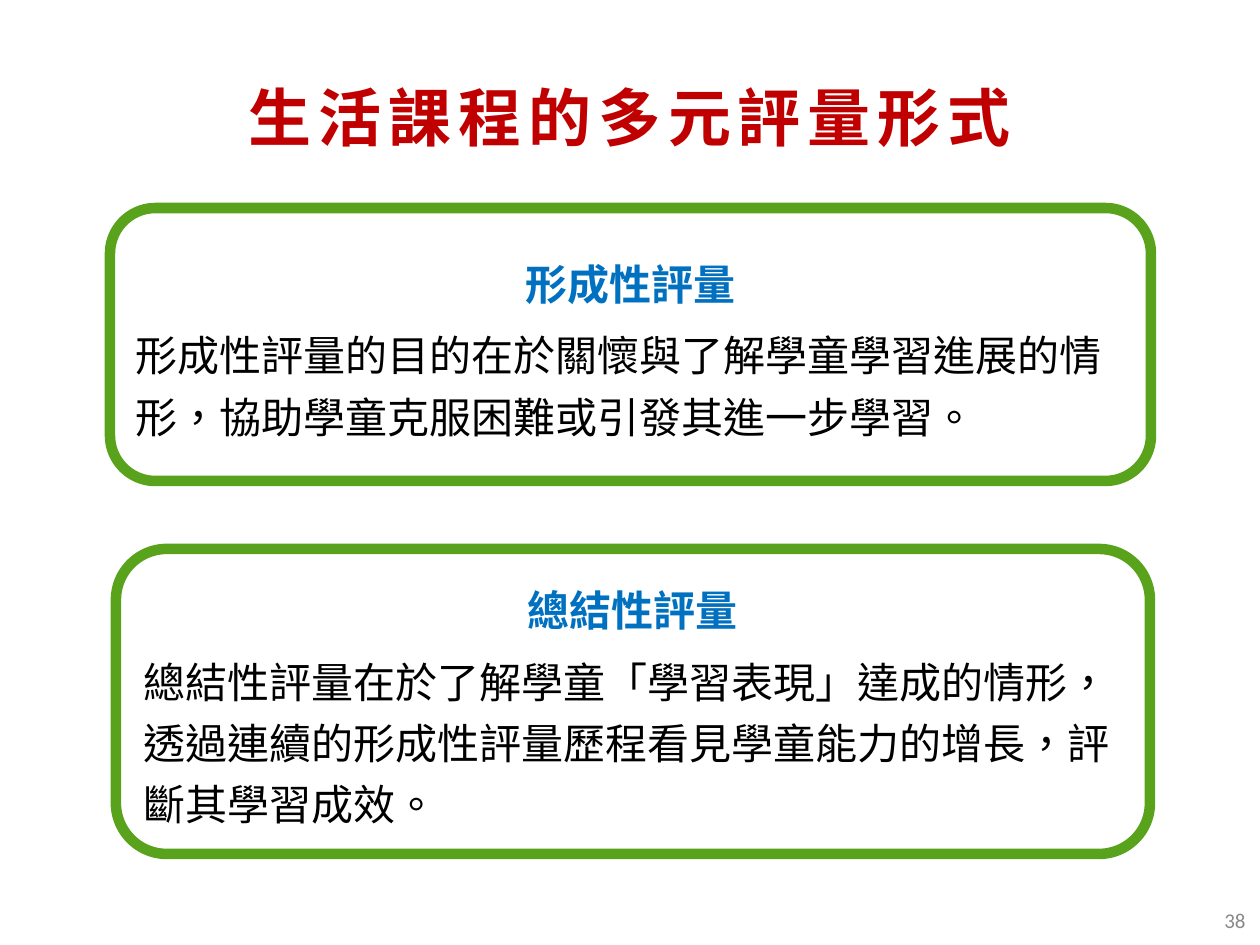
"""Build a slide on the forms of assessment in the life curriculum."""
from lxml import etree
from pptx import Presentation
from pptx import util as u
from pptx.dml.color import RGBColor
from pptx.enum import shapes, text
from pptx.oxml.ns import qn

PX = 914400 // 126
COLORS = {"title": "C00000", "heading": "0070C0", "body": "000000",
          "number": "898989", "border": "58A31B", "panel": "FFFFFF"}
CJK = "Noto Sans CJK SC"
ALIGN = text.PP_ALIGN


def write(paragraph, words, color, font, align, spacing=0):
    paragraph.alignment = align
    run = paragraph.add_run()
    run.text = words
    for name, value in font.items():
        setattr(run.font, name, value)
    run.font.color.rgb = RGBColor.from_string(COLORS[color])
    props = run._r.get_or_add_rPr()
    props.set("lang", "zh-TW")
    if spacing:
        props.set("spc", str(spacing))
    etree.SubElement(props, qn("a:ea")).set("typeface", font["name"])


prs = Presentation()
prs.slide_width, prs.slide_height = 1260 * PX, 945 * PX
slide = prs.slides.add_slide(prs.slide_layouts[6])

labels = [
    ((87, 43, 1086, 146), "生活課程的多元評量形式", "title",
     {"name": CJK, "size": u.Pt(36), "bold": True}, ALIGN.CENTER, 400),
    ((974, 895, 284, 50), "38", "number",
     {"name": "Calibri", "size": u.Pt(12)}, ALIGN.RIGHT, 0),
]
for place, words, color, font, align, spacing in labels:
    label = slide.shapes.add_textbox(*(n * PX for n in place)).text_frame
    label.word_wrap = True
    label.vertical_anchor = text.MSO_ANCHOR.MIDDLE
    write(label.paragraphs[0], words, color, font, align, spacing)

assessments = [
    ((110, 208, 1041, 273), "形成性評量",
     "形成性評量的目的在於關懷與了解學童學習進展的情形，協助學童克服困難或引發其進一步學習。"),
    ((116, 549, 1034, 305), "總結性評量",
     "總結性評量在於了解學童「學習表現」達成的情形，透過連續的形成性評量歷程看見學童能力的增長，評斷其學習成效。"),
]
for place, heading, body in assessments:
    panel = slide.shapes.add_shape(
        shapes.MSO_SHAPE.FLOWCHART_ALTERNATE_PROCESS, *(n * PX for n in place))
    panel.shadow.inherit = False
    panel.fill.solid()
    panel.fill.fore_color.rgb = RGBColor.from_string(COLORS["panel"])
    panel.line.color.rgb = RGBColor.from_string(COLORS["border"])
    panel.line.width = u.Pt(6)
    frame = panel.text_frame
    frame.word_wrap = True
    frame.vertical_anchor = text.MSO_ANCHOR.MIDDLE
    frame.add_paragraph()
    parts = [(heading, "heading", True, ALIGN.CENTER), (body, "body", False, ALIGN.LEFT)]
    for paragraph, (words, color, bold, align) in zip(frame.paragraphs, parts):
        paragraph.line_spacing = u.Pt(35)
        paragraph.space_after = u.Pt(6)
        write(paragraph, words, color,
              {"name": CJK, "size": u.Pt(24), "bold": bold}, align)

prs.save("out.pptx")
